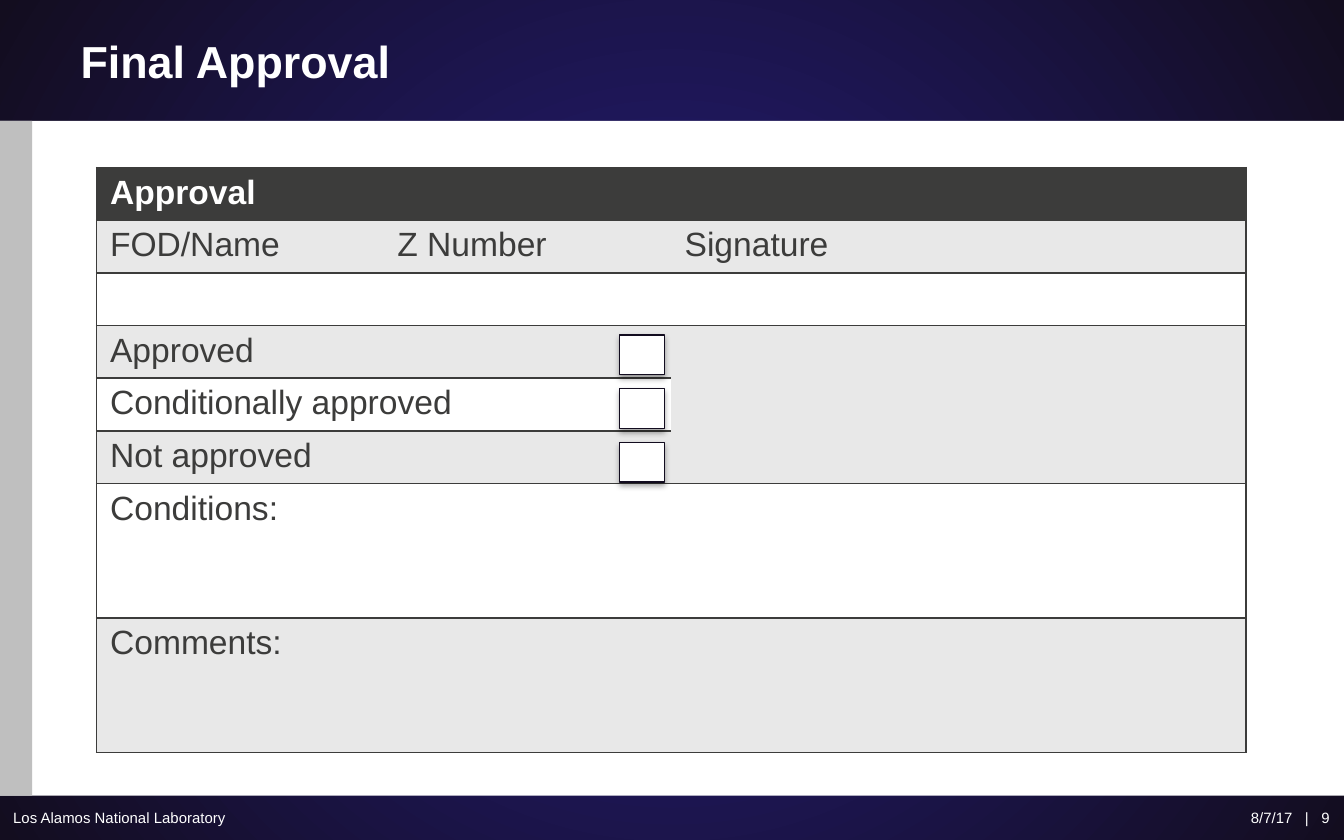
from dataclasses import dataclass

from lxml.etree import SubElement
from pptx import Presentation
from pptx.dml.color import RGBColor
from pptx.enum.shapes import MSO_SHAPE as Preset
from pptx.enum.text import MSO_ANCHOR as Anchor, PP_ALIGN as Align
from pptx.oxml.ns import qn
from pptx.util import Pt


@dataclass(frozen=True)
class Theme:
    font: str = "Arial"
    glow: str = "251D7D"
    night: str = "130D1F"
    white: str = "FFFFFF"
    ink: str = "3C3C3B"
    band: str = "E8E8E8"
    rail: str = "BFBFBF"
    box_line: str = "120C1F"
    shadow: str = "000000"
    title_size: int = 24
    table_size: int = 18
    footer_size: int = 8


THEME = Theme()


def color(value):
    return RGBColor.from_string(value)


def write_text(frame, text, *, size, ink, bold=False, align=Align.LEFT, anchor=Anchor.TOP):
    frame.word_wrap = True
    frame.vertical_anchor = anchor
    paragraph = frame.paragraphs[0]
    paragraph.alignment = align
    run = paragraph.add_run()
    run.text = text
    font = run.font
    font.name, font.size, font.bold = THEME.font, Pt(size), bold
    font.color.rgb = color(ink)


def add_rectangle(slide, left, top, width, height, fill, line=None):
    shape = slide.shapes.add_shape(Preset.RECTANGLE, Pt(left), Pt(top), Pt(width), Pt(height))
    shape.shadow.inherit = False
    shape.fill.solid()
    shape.fill.fore_color.rgb = color(fill)
    if line:
        shape.line.color.rgb = color(line)
        shape.line.width = Pt(0.75)
    else:
        shape.line.fill.background()
    return shape


def paint_background(slide):
    fill = slide.background.fill
    fill.gradient()
    for stop, value in zip(fill.gradient_stops, (THEME.glow, THEME.night)):
        stop.color.rgb = color(value)
    gradient = next(slide.element.iter(qn("a:gradFill")))
    gradient.remove(gradient.find(qn("a:lin")))
    circle = SubElement(gradient, qn("a:path"), {"path": "circle"})
    SubElement(circle, qn("a:fillToRect"), dict.fromkeys("ltrb", "50000"))


def add_title(slide, left, top, width, height):
    title = slide.shapes.title
    title.left, title.top, title.width, title.height = map(Pt, (left, top, width, height))
    write_text(title.text_frame, "Final Approval", size=THEME.title_size, ink=THEME.white,
               bold=True, anchor=Anchor.MIDDLE)


def add_body(slide, left, top, width, height):
    add_rectangle(slide, left, top, width, height, THEME.white)
    add_rectangle(slide, left, top, 17.2, height, THEME.rail)


def add_footer(slide, left, top, width, height):
    date_width = 168
    parts = (
        ("8/7/17   |   9", left + width - date_width - 0.5, date_width, Align.RIGHT),
        ("Los Alamos National Laboratory", left, 260, Align.LEFT),
    )
    for text, x, box_width, align in parts:
        box = slide.shapes.add_textbox(Pt(x), Pt(top), Pt(box_width), Pt(height))
        write_text(box.text_frame, text, size=THEME.footer_size, ink=THEME.white,
                   align=align, anchor=Anchor.MIDDLE)


def set_borders(cell, visible):
    properties = cell._tc.get_or_add_tcPr()
    for index, side in enumerate("LRTB"):
        line = SubElement(properties, qn(f"a:ln{side}"), {"w": str(Pt(1))})
        if side in visible:
            fill = SubElement(line, qn("a:solidFill"))
            SubElement(fill, qn("a:srgbClr"), {"val": THEME.ink})
        else:
            SubElement(line, qn("a:noFill"))
        properties.insert(index, line)


def add_approval_table(slide, left, top, width, height):
    labels = (
        ("Approval",),
        ("FOD/Name", "Z Number", "Signature"),
        (),
        ("Approved",),
        ("Conditionally approved",),
        ("Not approved",),
        ("Conditions:",),
        ("Comments:",),
    )
    tall_rows, tall_height = 2, 72
    short_height = (height - tall_rows * tall_height) / (len(labels) - tall_rows)
    table = slide.shapes.add_table(len(labels), 3, Pt(left), Pt(top), Pt(width), Pt(height)).table
    for column, share in zip(table.columns, (0.25, 0.25, 0.5)):
        column.width = Pt(width * share)
    for index, row in enumerate(table.rows):
        row.height = Pt(tall_height if index >= len(labels) - tall_rows else short_height)
    for first, last in (((0, 0), (0, 2)), ((3, 0), (3, 1)), ((4, 0), (4, 1)), ((5, 0), (5, 1)),
                        ((3, 2), (5, 2)), ((6, 0), (6, 2)), ((7, 0), (7, 2))):
        table.cell(*first).merge(table.cell(*last))
    for row, texts in enumerate(labels):
        for column in range(3):
            cell = table.cell(row, column)
            cell.margin_top = cell.margin_bottom = Pt(3.3)
            if column < len(texts):
                write_text(cell.text_frame, texts[column], size=THEME.table_size,
                           ink=THEME.ink if row else THEME.white, bold=row == 0)
            cell.fill.solid()
            cell.fill.fore_color.rgb = color(
                THEME.ink if row == 0 else THEME.band if row % 2 else THEME.white)
            reaches_right = column + (cell.span_width if cell.is_merge_origin else 1) == 3
            sides = "" if column == 2 and row in (4, 5) else "TB"
            set_borders(cell, sides + "L" * (column == 0) + "R" * reaches_right)


def add_checkboxes(slide, left, top, width, height):
    box_height = 21.2
    step = (height - box_height) / 2
    for index in range(3):
        box = add_rectangle(slide, left, top + index * step, width, box_height,
                            THEME.white, THEME.box_line)
        effects = box.element.spPr.find(qn("a:effectLst"))
        shadow = SubElement(effects, qn("a:outerShdw"), {
            "blurRad": str(Pt(3.1)), "dist": str(Pt(1.8)), "dir": "5400000", "rotWithShape": "0"})
        shade = SubElement(shadow, qn("a:srgbClr"), {"val": THEME.shadow})
        SubElement(shade, qn("a:alpha"), {"val": "35000"})


def main():
    presentation = Presentation()
    presentation.slide_width, presentation.slide_height = Pt(720), Pt(450)
    slide = presentation.slides.add_slide(presentation.slide_layouts[5])
    paint_background(slide)
    add_body(slide, 0, 64.8, 720, 361.4)
    add_title(slide, 36, 0, 648, 64.8)
    add_footer(slide, 0, 426.2, 720, 23.8)
    add_approval_table(slide, 51.8, 89.8, 615.6, 308.4)
    add_checkboxes(slide, 332, 179.5, 24, 78.8)
    presentation.save("out.pptx")


if __name__ == "__main__":
    main()
